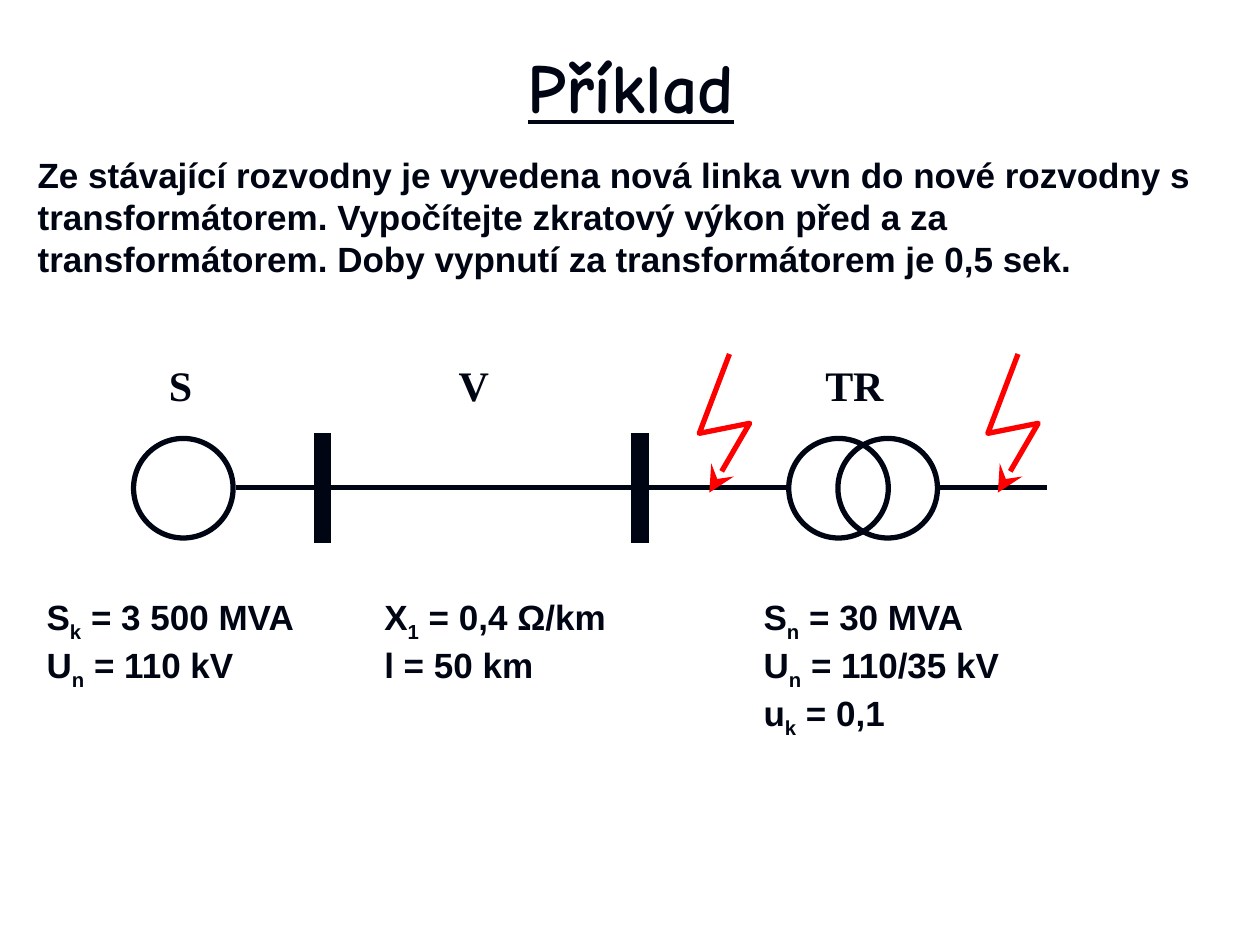
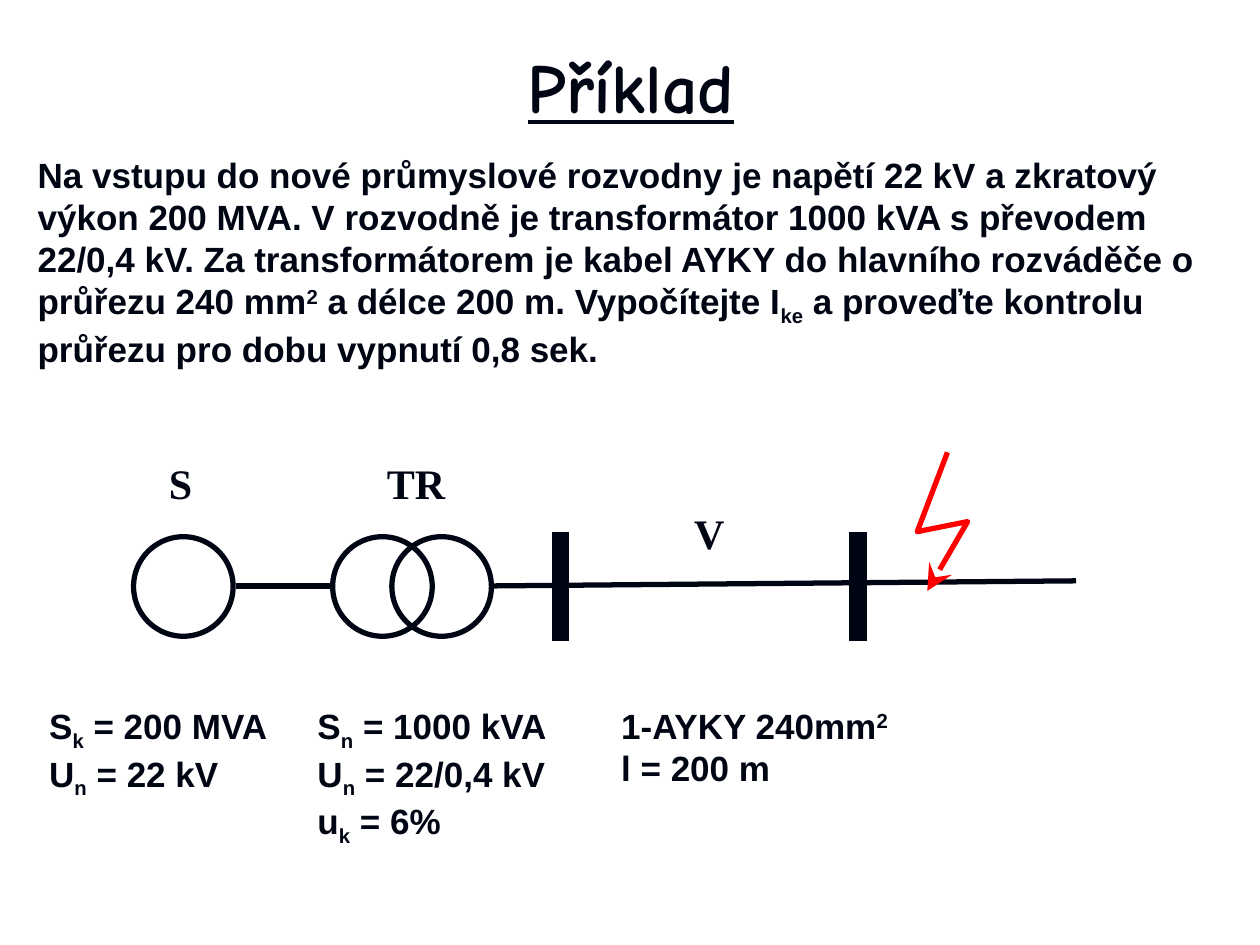
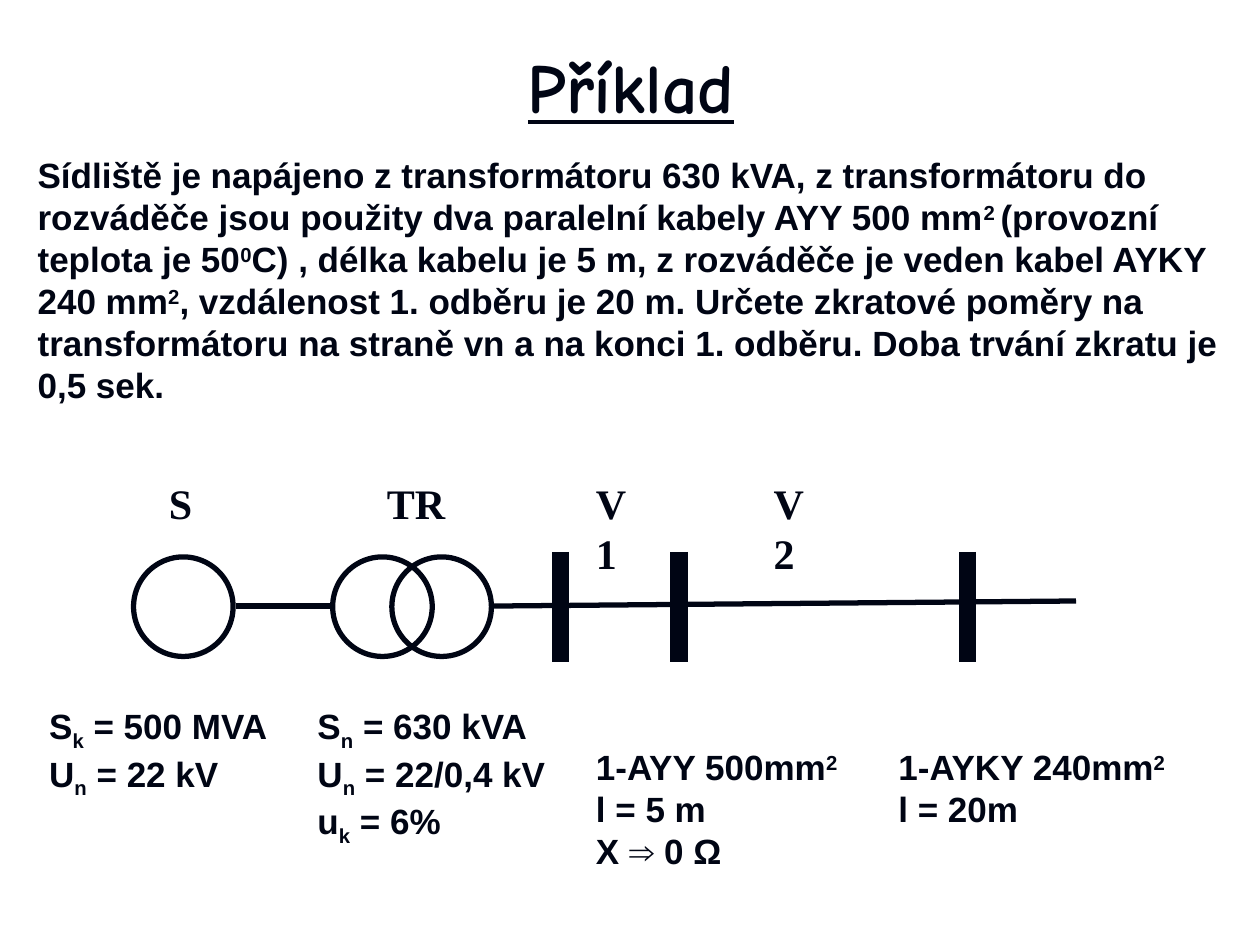
from pptx import Presentation
from pptx.dml.color import RGBColor
from pptx.enum.shapes import MSO_CONNECTOR as Link, MSO_SHAPE as Shape
from pptx.enum.text import MSO_ANCHOR as Anchor, PP_ALIGN as Align
from pptx.oxml.ns import qn
from pptx.util import Inches, Pt
from lxml.etree import SubElement

INK = RGBColor(0x00, 0x05, 0x14)
RED = RGBColor(0xFF, 0x00, 0x00)
SANS, SERIF, COMIC = "Arial", "Times New Roman", "Comic Neue"
SHIFT = {"_": "-25000", "^": "30000"}
RING, RISE, DROP = 0.79, 0.63, 0.87


class Deck:
    def __init__(self):
        self.prs = Presentation()
        self.prs.slide_width = Inches(10)
        self.prs.slide_height = Inches(7.5)

    def page(self, task, top):
        self.slide = self.prs.slides.add_slide(self.prs.slide_layouts[6])
        self.top = top
        self.title("Příklad")
        self.text(task, 0.2, 1.17, 9.69, 1.77, wrap=True)

    def text(self, text, x, y, w, h, font=SANS, size=20, pad=None, wrap=False):
        box = self.slide.shapes.add_textbox(*map(Inches, (x, y, w, h)))
        frame = box.text_frame
        frame.word_wrap = wrap
        if pad is not None:
            frame.margin_left = frame.margin_right = Inches(pad)
            frame.margin_top = frame.margin_bottom = Inches(pad)
        frame.text = text
        for par in frame.paragraphs:
            parts = par.text.split("|")
            par.text = ""
            for part in parts:
                if part:
                    self.run(par, part, font, size)
        return frame

    def run(self, par, part, font, size):
        run = par.add_run()
        run.text = part.lstrip("_^")
        run.font.name = font
        run.font.size = Pt(size)
        run.font.bold = True
        run.font.color.rgb = INK
        if part[0] in SHIFT:
            run.font._element.set("baseline", SHIFT[part[0]])

    def title(self, text):
        frame = self.text(text, 0.51, 0.28, 9, 0.79, COMIC, 40, wrap=True)
        frame.vertical_anchor = Anchor.MIDDLE
        par = frame.paragraphs[0]
        par.alignment = Align.CENTER
        par.runs[0].font.underline = True

    def note(self, text, x, y, w):
        self.text(text, x, y, w, 0.33 * (text.count("\n") + 1) + 0.08, pad=0.04)

    def label(self, text, x, w, down=0, wrap=False):
        self.text(text, x, self.top + down, w, 0.48, SERIF, 24, 0.04, wrap)

    def pen(self, shape, color=INK, width=3):
        shape.line.color.rgb = color
        shape.line.width = Pt(width)

    def rings(self, *lefts):
        for x in lefts:
            ring = self.slide.shapes.add_shape(
                Shape.OVAL, Inches(x), Inches(self.top + 0.67), Inches(RING), Inches(RING))
            ring.shadow.inherit = False
            ring.fill.background()
            self.pen(ring)

    def line(self, x1, y1, x2, y2, width=3):
        ends = (x1, self.top + y1, x2, self.top + y2)
        line = self.slide.shapes.add_connector(Link.STRAIGHT, *map(Inches, ends))
        self.pen(line, width=width)
        SubElement(line._element.spPr, qn("a:effectLst"))

    def bars(self, *spots):
        for x in spots:
            self.line(x, RISE, x, RISE + DROP, 10)

    def bolt(self, x):
        steps = ((0.24, 0), (0, 0.63), (0.4, 0.55), (0.08, 1.1))
        dots = [(Inches(x + dx), Inches(self.top + dy)) for dx, dy in steps]
        path = self.slide.shapes.build_freeform(*dots[0])
        path.add_line_segments(dots[1:], close=False)
        bolt = path.convert_to_shape()
        bolt.shadow.inherit = False
        bolt.fill.background()
        self.pen(bolt, RED)
        SubElement(bolt.line._get_or_add_ln(), qn("a:tailEnd"),
                   type="stealth", w="lg", len="lg")

    def feed(self):
        self.rings(1.06, 3.11, 2.64)
        self.line(1.87, 1.06, 2.62, 1.06)
        self.line(3.92, 1.06, 8.54, 1.02)
        self.label("S", 1.3, 0.25)
        self.label("TR", 3.03, 0.6)

    def specs(self, grid, power):
        self.note(f"S|_k| = {grid} MVA\nU|_n| = 22 kV", 0.35, 5.55, 1.97)
        self.note(f"S|_n| = {power} kVA\nU|_n| = 22/0,4 kV\nu|_k| = 6%", 2.48, 5.55, 1.93)


def main():
    deck = Deck()

    deck.page(
        "Ze stávající rozvodny je vyvedena nová linka vvn do nové rozvodny s "
        "transformátorem. Vypočítejte zkratový výkon před a za transformátorem. "
        "Doby vypnutí za transformátorem je 0,5 sek.", 2.81)
    deck.note("S|_k| = 3 500 MVA\nU|_n| = 110 kV", 0.33, 4.69, 2.37)
    deck.note("X|_1| = 0,4 Ω/km\nl = 50 km", 3.01, 4.69, 1.85)
    deck.note("S|_n| = 30 MVA\nU|_n| = 110/35 kV\nu|_k| = 0,1", 6.02, 4.69, 1.97)
    deck.rings(1.06, 6.65, 6.26)
    deck.bars(2.56, 5.08)
    deck.line(1.87, 1.06, 6.24, 1.06)
    deck.line(7.46, 1.06, 8.31, 1.06)
    deck.label("TR", 6.51, 0.6)
    deck.label("V", 3.6, 0.3)
    deck.label("S", 1.3, 0.25)
    deck.bolt(5.55)
    deck.bolt(7.84)

    deck.page(
        "Na vstupu do nové průmyslové rozvodny je napětí 22 kV a zkratový výkon "
        "200 MVA. V rozvodně je transformátor 1000 kVA s převodem 22/0,4 kV. Za "
        "transformátorem je kabel AYKY do hlavního rozváděče o průřezu 240 mm|^2| "
        "a délce 200 m. Vypočítejte I|_ke| a proveďte kontrolu průřezu pro dobu "
        "vypnutí 0,8 sek.", 3.59)
    deck.specs("200", "1000")
    deck.note("1-AYKY 240mm|^2\nl = 200 m", 4.89, 5.55, 2.23)
    deck.feed()
    deck.bars(4.45, 6.81)
    deck.label("V", 5.47, 0.3, 0.4)
    deck.bolt(7.28)

    deck.page(
        "Sídliště je napájeno z transformátoru 630 kVA, z transformátoru do "
        "rozváděče jsou použity dva paralelní kabely AYY 500 mm|^2 |(provozní "
        "teplota je 50|^0|C) , délka kabelu je 5 m, z rozváděče je veden kabel "
        "AYKY 240 mm|^2|, vzdálenost 1. odběru je 20 m. Určete zkratové poměry na "
        "transformátoru na straně vn a na konci 1. odběru. Doba trvání zkratu je "
        "0,5 sek.", 3.75)
    deck.feed()
    deck.bars(4.45, 5.39, 7.68)
    deck.label("V1", 4.69, 0.43, wrap=True)
    deck.label("V2", 6.1, 0.46, wrap=True)
    deck.specs("500", "630")
    deck.note("1-AYY 500mm|^2\nl = 5 m\nX ⇒ 0 Ω", 4.69, 5.88, 2.03)
    deck.note("1-AYKY 240mm|^2\nl = 20m", 7.09, 5.88, 2.23)

    deck.prs.save("out.pptx")


if __name__ == "__main__":
    main()
